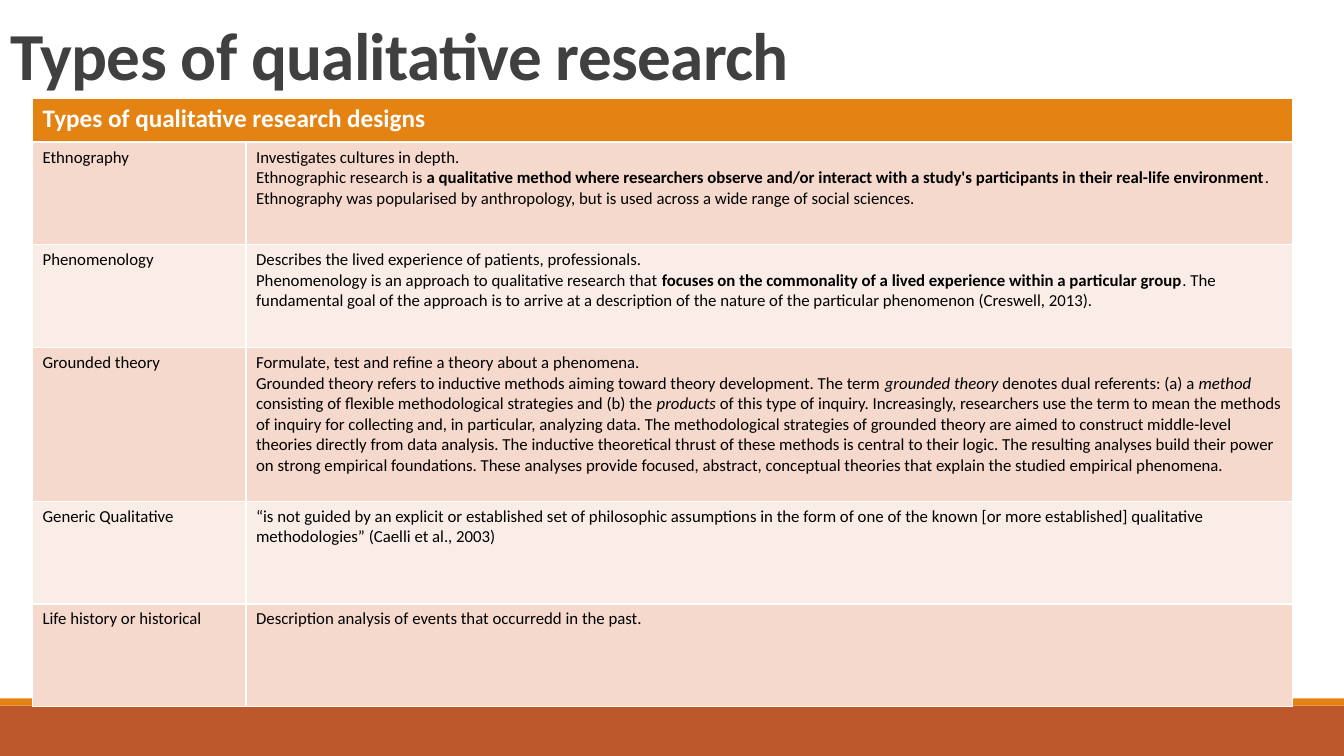
from pptx import Presentation
from pptx.dml.color import RGBColor
from pptx.enum.shapes import MSO_SHAPE
from pptx.enum.text import MSO_ANCHOR, MSO_AUTO_SIZE, PP_ALIGN
from pptx.util import Cm, Pt

COLOURS = {
    "title": "404040",
    "header": "E48312",
    "footer": "BD582C",
    "dark_band": "F5D9CC",
    "light_band": "FAEDE7",
    "text": "000000",
    "white": "FFFFFF",
}
FORMATS = {
    "title": {"size": Pt(48), "bold": True},
    "header": {"size": Pt(18), "bold": True},
    "plain": {"size": Pt(12), "bold": False},
    "bold": {"size": Pt(12), "bold": True},
    "italic": {"size": Pt(12), "bold": False, "italic": True},
}
TITLE = "Types of qualitative research"
HEADER = "Types of qualitative research designs"
DESIGNS = [
    ("Ethnography", 2.59, [
        [("Investigates cultures in depth.", "plain")],
        [("Ethnographic research is ", "plain"),
         ("a qualitative method where researchers observe and/or interact with "
          "a study's participants in their real-life environment", "bold"),
         (". Ethnography was popularised by anthropology, but is used across "
          "a wide range of social sciences.", "plain")],
    ]),
    ("Phenomenology", 2.59, [
        [("Describes the lived experience of patients, professionals.", "plain")],
        [("Phenomenology is an approach to qualitative research that ", "plain"),
         ("focuses on the commonality of a lived experience within "
          "a particular group", "bold"),
         (". The fundamental goal of the approach is to arrive at a description "
          "of the nature of the particular phenomenon (Creswell, 2013).", "plain")],
    ]),
    ("Grounded theory", 3.87, [
        [("Formulate, test and refine a theory about a phenomena.", "plain")],
        [("Grounded theory refers to inductive methods aiming toward "
          "theory development. The term ", "plain"),
         ("grounded theory ", "italic"),
         ("denotes dual referents: (a) a ", "plain"),
         ("method", "italic"),
         (" consisting of flexible methodological strategies and (b) the ", "plain"),
         ("products", "italic"),
         (" of this type of inquiry. Increasingly, researchers use the term to "
          "mean the methods of inquiry for collecting and, in particular, "
          "analyzing data. The methodological strategies of grounded theory are "
          "aimed to construct middle-level theories directly from data analysis. "
          "The inductive theoretical thrust of these methods is central to their "
          "logic. The resulting analyses build their power on strong empirical "
          "foundations. These analyses provide focused, abstract, conceptual "
          "theories that explain the studied empirical phenomena.", "plain")],
    ]),
    ("Generic Qualitative", 2.59, [
        [("“is not guided by an explicit or established set of philosophic "
          "assumptions in the form of one of the known [or more established] "
          "qualitative methodologies” (Caelli et al., 2003)", "plain")],
    ]),
    ("Life history or historical", 2.59, [
        [("Description analysis of events that occurredd in the past.", "plain")],
    ]),
]


def colour(name):
    """Return the named colour."""
    return RGBColor.from_string(COLOURS[name])


def set_attributes(target, values):
    """Set every attribute in a dict of values."""
    for name, value in values.items():
        setattr(target, name, value)


def add_run(paragraph, text, format_name, colour_name):
    """Append one formatted run to a paragraph."""
    run = paragraph.add_run()
    run.text = text
    set_attributes(run.font, {"name": "Calibri", **FORMATS[format_name]})
    run.font.color.rgb = colour(colour_name)
    return run


def add_bar(slide, top, height, colour_name):
    """Draw a full-width bar."""
    shape = slide.shapes.add_shape(
        MSO_SHAPE.RECTANGLE, 0, Cm(top), Cm(33.87), Cm(height))
    shape.shadow.inherit = False
    shape.fill.solid()
    shape.fill.fore_color.rgb = colour(colour_name)
    shape.line.fill.background()


def format_title(slide):
    """Place and fill the title placeholder."""
    title = slide.shapes.title
    set_attributes(title, {"left": Cm(0), "top": Cm(-1.55),
                           "width": Cm(27.94), "height": Cm(4.04)})
    set_attributes(title.text_frame, {"vertical_anchor": MSO_ANCHOR.BOTTOM,
                                      "word_wrap": True,
                                      "auto_size": MSO_AUTO_SIZE.NONE})
    paragraph = title.text_frame.paragraphs[0]
    set_attributes(paragraph, {"alignment": PP_ALIGN.LEFT, "line_spacing": 0.85})
    run = add_run(paragraph, TITLE, "title", "title")
    run.font._element.set("spc", "-50")


def fill_cell(cell, paragraphs, fill_name, text_name):
    """Colour a cell and write its paragraphs of runs."""
    cell.fill.solid()
    cell.fill.fore_color.rgb = colour(fill_name)
    for index, runs in enumerate(paragraphs):
        frame = cell.text_frame
        paragraph = frame.add_paragraph() if index else frame.paragraphs[0]
        for text, format_name in runs:
            add_run(paragraph, text, format_name, text_name)


def add_designs_table(slide):
    """Build the table of research designs."""
    heights = [1.09] + [height for _, height, _ in DESIGNS]
    widths = [5.38, 26.37]
    table = slide.shapes.add_table(
        len(heights), len(widths), Cm(0.82), Cm(2.49),
        Cm(sum(widths)), Cm(sum(heights))).table
    for column, width in zip(table.columns, widths):
        column.width = Cm(width)
    for row, height in zip(table.rows, heights):
        row.height = Cm(height)
    table.cell(0, 0).merge(table.cell(0, 1))
    fill_cell(table.cell(0, 0), [[(HEADER, "header")]], "header", "white")
    for row, (name, _, description) in enumerate(DESIGNS, start=1):
        band = "dark_band" if row % 2 else "light_band"
        fill_cell(table.cell(row, 0), [[(name, "plain")]], band, "text")
        fill_cell(table.cell(row, 1), description, band, "text")


def main():
    """Build and save the presentation."""
    presentation = Presentation()
    set_attributes(presentation, {"slide_width": Cm(33.87),
                                  "slide_height": Cm(19.05)})
    slide = presentation.slides.add_slide(presentation.slide_layouts[5])
    add_bar(slide, 17.78, 1.27, "footer")
    add_bar(slide, 17.6, 0.18, "header")
    format_title(slide)
    add_designs_table(slide)
    presentation.save("out.pptx")


if __name__ == "__main__":
    main()
